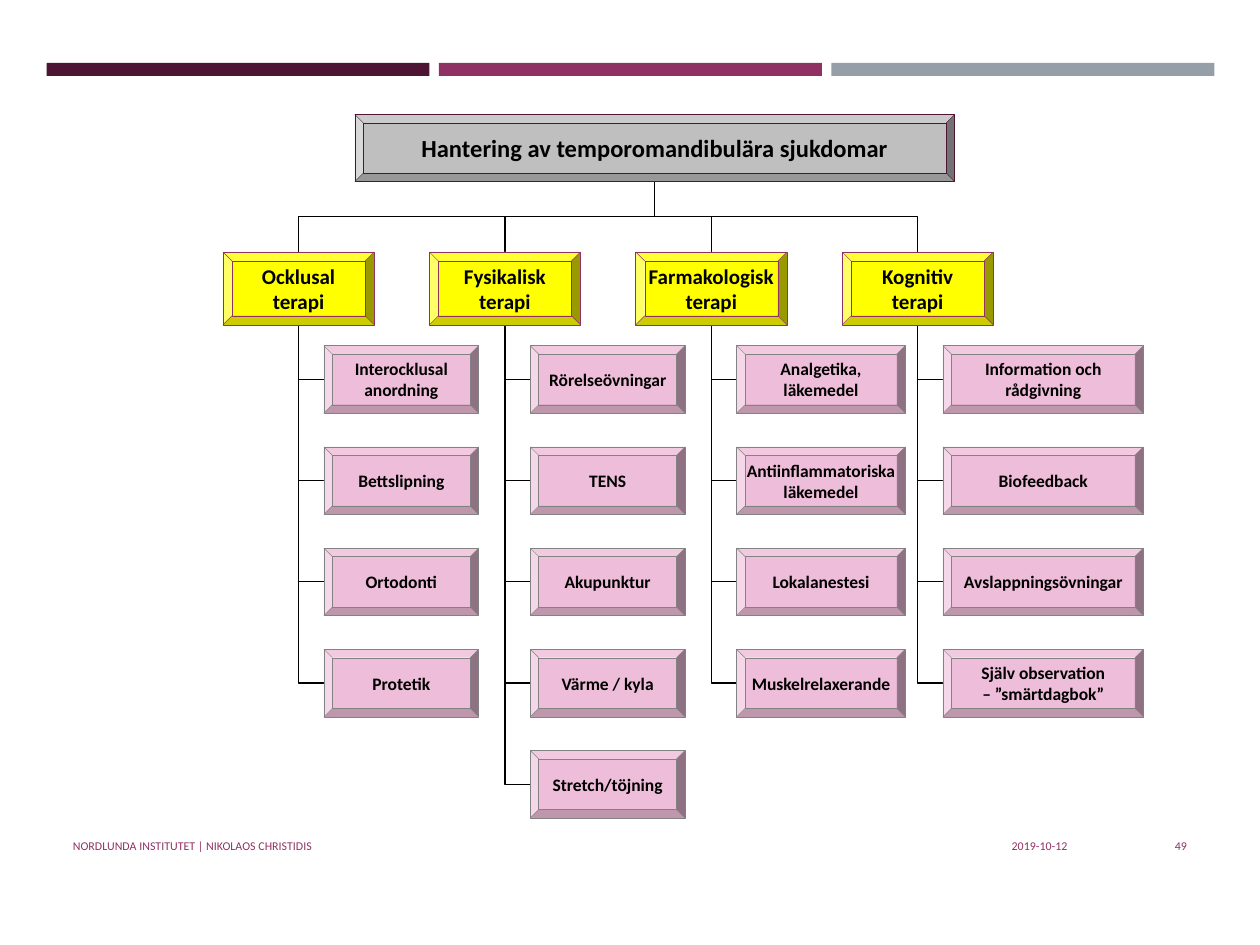
from lxml import etree
from pptx import Presentation
from pptx.dml.color import RGBColor
from pptx.enum.shapes import MSO_CONNECTOR, MSO_SHAPE
from pptx.enum.text import MSO_ANCHOR, PP_ALIGN
from pptx.oxml.ns import qn
from pptx.util import Cm, Pt

FONT = "Calibri"
COLORS = {
    "plum": "4D1434", "magenta": "903163", "slate": "969FA7",
    "grey": "BFBFBF", "yellow": "FFFF00", "pink": "EEBDD9",
    "edge": "828282", "black": "000000",
}
BARS = ["plum", "magenta", "slate"]
ROOT = "Hantering av temporomandibulära sjukdomar"
THERAPIES = [
    ("Ocklusal\nterapi", 3.12,
     ["Interocklusal\nanordning", "Bettslipning", "Ortodonti", "Protetik"]),
    ("Fysikalisk\nterapi", 3.12,
     ["Rörelseövningar", "TENS", "Akupunktur", "Värme / kyla", "Stretch/töjning"]),
    ("Farmakologisk\nterapi", 3.4,
     ["Analgetika,\nläkemedel", "Antiinflammatoriska\nläkemedel",
      "Lokalanestesi", "Muskelrelaxerande"]),
    ("Kognitiv\nterapi", 4.04,
     ["Information och\nrådgivning", "Biofeedback", "Avslappningsövningar",
      "Själv observation\n– ”smärtdagbok”"]),
]
FOOTERS = [
    ("2019-10-12", 15.85, 5.92, PP_ALIGN.RIGHT),
    ("NORDLUNDA INSTITUTET | NIKOLAOS CHRISTIDIS", 1.22, 14.4, PP_ALIGN.LEFT),
    ("49", 22, 2.18, PP_ALIGN.RIGHT),
]

ROOT_X, ROOT_TOP, ROOT_W, ROOT_H = 13.2, 2.31, 12.09, 1.35
TRUNK_X, COLUMN_STEP = 6.02, 4.16
HEAD_TOP, HEAD_W, HEAD_H = 5.08, 3.05, 1.47
LEAF_INDENT, LEAF_TOP, LEAF_STEP, LEAF_H = 0.51, 6.97, 2.04, 1.36


def rgb(name):
    return RGBColor.from_string(COLORS[name])


def write(tf, text, size, color, align, bold=False):
    tf.text = text
    tf.vertical_anchor = MSO_ANCHOR.MIDDLE
    for p in tf.paragraphs:
        p.alignment = align
        for r in p.runs:
            r.font.name, r.font.size, r.font.bold = FONT, Pt(size), bold
            r.font.color.rgb = rgb(color)


def add_filled(s, kind, x, y, w, h, fill):
    sp = s.shapes.add_shape(kind, Cm(x), Cm(y), Cm(w), Cm(h))
    sp.shadow.inherit = False
    sp.fill.solid()
    sp.fill.fore_color.rgb = rgb(fill)
    sp.line.fill.background()
    return sp


def add_box(s, x, y, w, h, text, size, fill, edge):
    sp = add_filled(s, MSO_SHAPE.BEVEL, x, y, w, h, fill)
    sp.line.color.rgb = rgb(edge)
    sp.line.width = Pt(0.25)
    tf = sp.text_frame
    tf.word_wrap = False
    tf.margin_left = tf.margin_right = tf.margin_top = tf.margin_bottom = 0
    write(tf, text, size, "black", PP_ALIGN.CENTER, True)


def add_branch(s, x1, y1, x2, y2, preset):
    """Draw an elbow that leaves its start downwards, as a quarter-turned connector."""
    mid_x, mid_y = (x1 + x2) / 2, (y1 + y2) / 2
    half_w, half_h = (y2 - y1) / 2, (x2 - x1) / 2
    c = s.shapes.add_connector(
        MSO_CONNECTOR.ELBOW, Cm(mid_x - half_w), Cm(mid_y + half_h),
        Cm(mid_x + half_w), Cm(mid_y - half_h))
    c.line.color.rgb = rgb("black")
    c.line.width = Pt(0.75)
    sp_pr = c._element.spPr
    sp_pr.find(qn("a:xfrm")).set("rot", "5400000")
    sp_pr.find(qn("a:prstGeom")).set("prst", preset)
    etree.SubElement(sp_pr, qn("a:effectLst"))


def main():
    prs = Presentation()
    prs.slide_width, prs.slide_height = Cm(25.4), Cm(19.05)
    s = prs.slides.add_slide(prs.slide_layouts[6])

    for i, color in enumerate(BARS):
        add_filled(s, MSO_SHAPE.RECTANGLE, 0.94 + 7.91 * i, 1.27, 7.72, 0.26, color)

    for i, (head, leaf_w, leaves) in enumerate(THERAPIES):
        x = TRUNK_X + COLUMN_STEP * i
        leaf_x = x + LEAF_INDENT
        add_branch(s, ROOT_X, ROOT_TOP + ROOT_H, x, HEAD_TOP, "bentConnector3")
        for j, leaf in enumerate(leaves):
            y = LEAF_TOP + LEAF_STEP * j
            add_branch(s, x, HEAD_TOP + HEAD_H, leaf_x, y + LEAF_H / 2, "bentConnector2")
            add_box(s, leaf_x, y, leaf_w, LEAF_H, leaf, 10, "pink", "edge")
        add_box(s, x - HEAD_W / 2, HEAD_TOP, HEAD_W, HEAD_H, head, 12, "yellow", "magenta")
    add_box(s, ROOT_X - ROOT_W / 2, ROOT_TOP, ROOT_W, ROOT_H, ROOT, 14, "grey", "plum")

    for text, x, w, align in FOOTERS:
        tf = s.shapes.add_textbox(Cm(x), Cm(16.54), Cm(w), Cm(1.02)).text_frame
        tf.word_wrap = True
        write(tf, text, 6.8, "magenta", align)

    prs.save("out.pptx")


if __name__ == "__main__":
    main()
